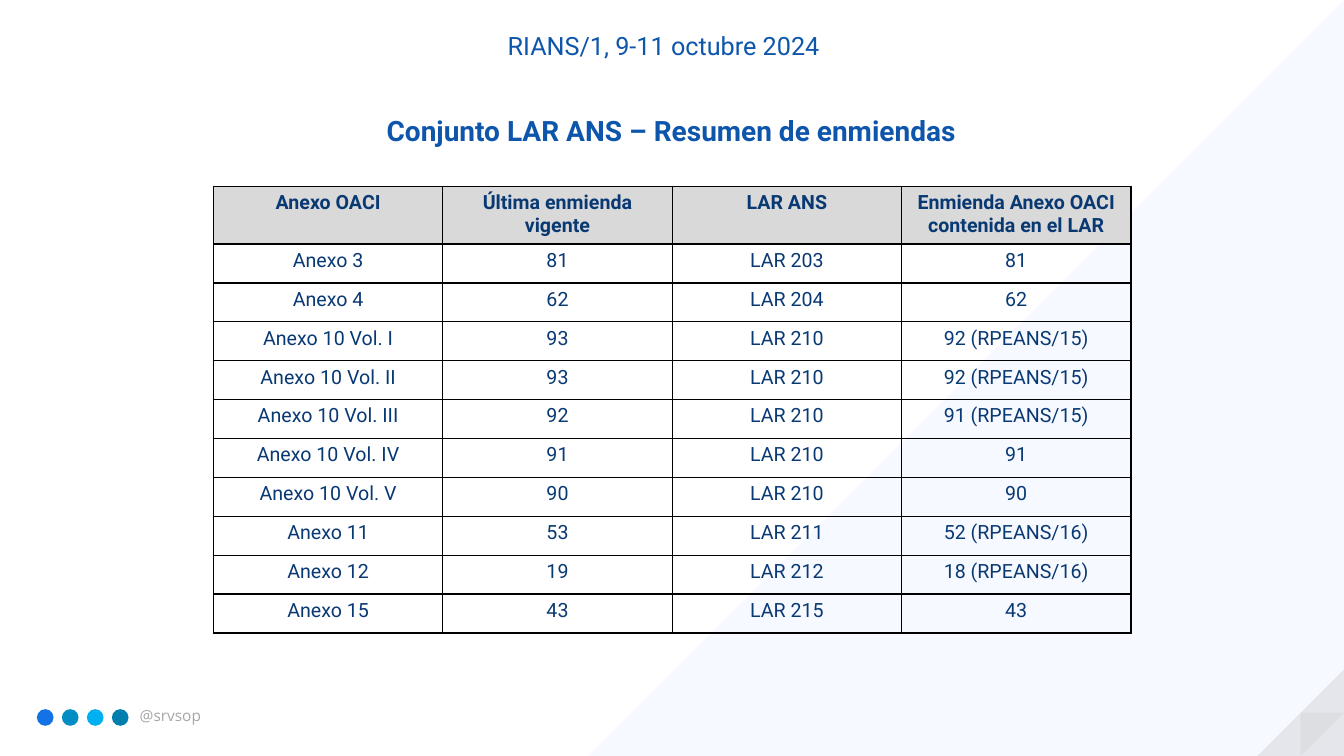
from lxml import etree
from pptx import Presentation
from pptx.dml.color import RGBColor
from pptx.enum.shapes import MSO_SHAPE as SHAPE
from pptx.enum.text import MSO_ANCHOR as ANCHOR, PP_ALIGN as ALIGN
from pptx.oxml.ns import qn
from pptx.util import Cm, Pt

BLUE, NAVY, GREY = "0E55AC", "093973", "A6A6A6"
ICON_COLORS = ["1372E6", "008DC3", "00B0F0", "007EAE"]
HEADER = ["Anexo OACI", "Última enmienda vigente", "LAR ANS",
          "Enmienda Anexo OACI contenida en el LAR"]
AMENDMENTS = [
    ["Anexo 3", "81", "LAR 203", "81"],
    ["Anexo 4", "62", "LAR 204", "62"],
    ["Anexo 10 Vol. I", "93", "LAR 210", "92 (RPEANS/15)"],
    ["Anexo 10 Vol. II", "93", "LAR 210", "92 (RPEANS/15)"],
    ["Anexo 10 Vol. III", "92", "LAR 210", "91 (RPEANS/15)"],
    ["Anexo 10 Vol. IV", "91", "LAR 210", "91"],
    ["Anexo 10 Vol. V", "90", "LAR 210", "90"],
    ["Anexo 11", "53", "LAR 211", "52 (RPEANS/16)"],
    ["Anexo 12", "19", "LAR 212", "18 (RPEANS/16)"],
    ["Anexo 15", "43", "LAR 215", "43"],
]


def paint(color_format, color):
    color_format.rgb = RGBColor.from_string(color)


def write(tf, text, size, color, font="Roboto", bold=False, align=ALIGN.CENTER):
    tf.text = text
    tf.word_wrap = True
    p = tf.paragraphs[0]
    p.alignment = align
    f = p.runs[0].font
    f.name, f.size, f.bold = font, Pt(size), bold
    paint(f.color, color)


def add_text(s, box, text, size, color, **style):
    sp = s.shapes.add_textbox(*map(Cm, box))
    write(sp.text_frame, text, size, color, **style)


def add_solid(s, kind, x, y, size, color, rotation=0, opacity=100):
    """Add a square-boxed shape without outline; opacity is in percent."""
    sp = s.shapes.add_shape(kind, Cm(x), Cm(y), Cm(size), Cm(size))
    sp.rotation = rotation
    sp.shadow.inherit = False
    sp.fill.solid()
    paint(sp.fill.fore_color, color)
    sp.line.fill.background()
    if opacity < 100:
        clr = sp.fill._xPr.find(qn("a:solidFill"))[0]
        etree.SubElement(clr, qn("a:alpha"), val=str(opacity * 1000))


def add_background(s, right, bottom):
    tri, big, corner = SHAPE.RIGHT_TRIANGLE, 19.05, 2.18
    fold = corner / 2
    add_solid(s, tri, right - big, bottom - big, big, "F6F9FF", 270)
    add_solid(s, tri, right - corner, bottom - corner, corner, GREY, 270, 22)
    add_solid(s, tri, right - fold, bottom - fold, fold, "BFBFBF", 90, 20)


def add_social_bar(s, x, y):
    pitch = 0.63
    for i, color in enumerate(ICON_COLORS):
        add_solid(s, SHAPE.OVAL, x + i * pitch, y, 0.42, color)
    add_text(s, (x + 2.34, y - 0.2, 3.78, 0.74), "@srvsop", 11, GREY,
             font="Open Sans", align=ALIGN.LEFT)


def add_title(s, box, text):
    sp = s.shapes.title
    sp.left, sp.top, sp.width, sp.height = map(Cm, box)
    write(sp.text_frame, text, 20, BLUE, bold=True)
    sp.text_frame.vertical_anchor = ANCHOR.TOP


def set_borders(cell, **widths):
    tc_pr = cell._tc.get_or_add_tcPr()
    for side in "LRTB":
        ln = etree.SubElement(tc_pr, qn(f"a:ln{side}"), w=str(Pt(widths.get(side, 1))))
        fill = etree.SubElement(ln, qn("a:solidFill"))
        etree.SubElement(fill, qn("a:srgbClr"), val="000000")


def add_amendment_table(s, x, y, width, header_height, row_height):
    rows = [HEADER] + AMENDMENTS
    height = header_height + row_height * len(AMENDMENTS)
    table = s.shapes.add_table(len(rows), len(HEADER), Cm(x), Cm(y),
                               Cm(width), Cm(height)).table
    table.horz_banding = False
    for r, texts in enumerate(rows):
        table.rows[r].height = Cm(row_height if r else header_height)
        for c, text in enumerate(texts):
            cell = table.cell(r, c)
            write(cell.text_frame, text, 14, NAVY, bold=r == 0)
            set_borders(cell, T=2.25 if r == 1 else 1, B=2.25 if r == 0 else 1)
            if r == 0:
                cell.fill.solid()
                paint(cell.fill.fore_color, "D9D9D9")
            else:
                cell.fill.background()


def main():
    prs = Presentation()
    prs.slide_width, prs.slide_height = Cm(33.87), Cm(19.05)
    s = prs.slides.add_slide(prs.slide_layouts[5])
    add_background(s, 33.87, 19.05)
    add_social_bar(s, 0.93, 17.87)
    add_text(s, (9.12, 0.64, 15.21, 1.02), "RIANS/1, 9-11 octubre 2024", 18, BLUE)
    add_title(s, (2.57, 2.72, 28.7, 1.12), "Conjunto LAR ANS – Resumen de enmiendas")
    add_amendment_table(s, 5.38, 4.69, 23.12, 1.46, 0.98)
    prs.save("out.pptx")


if __name__ == "__main__":
    main()
